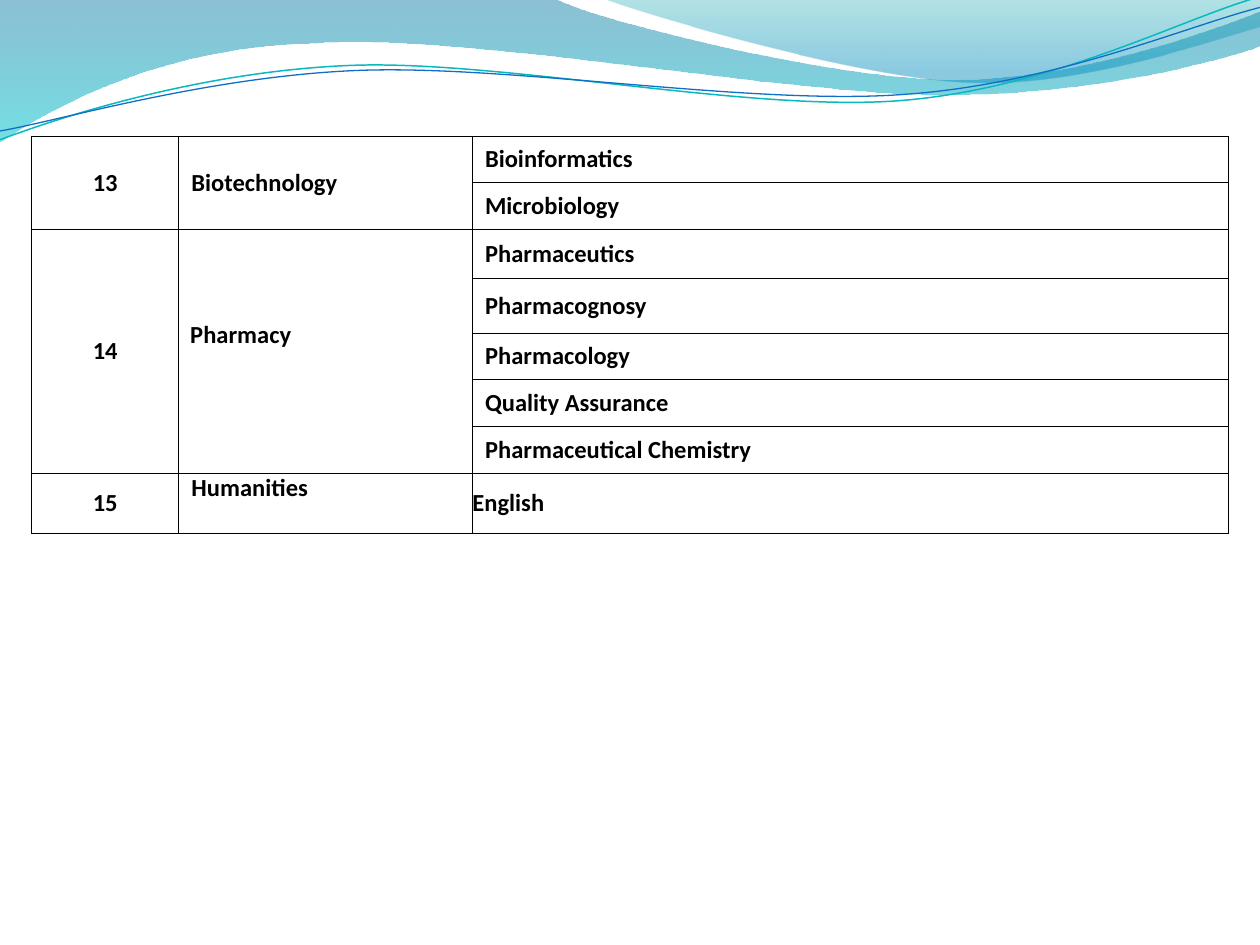
from math import cos, radians, sin

from lxml import etree
from pptx import Presentation
from pptx.dml.color import RGBColor
from pptx.enum.text import MSO_ANCHOR, PP_ALIGN
from pptx.oxml import parse_xml
from pptx.oxml.ns import nsdecls, qn
from pptx.util import Inches, Pt

# Wave outlines on a grid of ten columns across the slide: a start point,
# then points for lines (2 numbers) and Bezier curves (6 numbers).
BROAD_WAVE = [(0, 0), (4.4, -0.01), (4.76, 0.17, 6.64, 0.63, 7.58, 0.63),
              (8.53, 0.63, 9.58, 0.26, 10, 0.09), (10.01, 0.36),
              (9.83, 0.44, 8.7, 0.76, 7.46, 0.75), (6.22, 0.75, 3.82, 0.28, 2.57, 0.34),
              (1.29, 0.36, 0.46, 0.83, -0.01, 1.13), (0, 0)]
RIGHT_WAVE = [(4.79, -0.01), (5.09, 0.11, 6.82, 0.62, 7.69, 0.65),
              (8.56, 0.69, 9.61, 0.32, 10, 0.21), (10, 0), (4.79, -0.01)]
TEAL_STRAND = [(0, 1.11), (0.48, 0.93, 1.58, 0.57, 2.77, 0.52),
               (3.95, 0.47, 5.93, 0.89, 7.13, 0.8), (8.33, 0.71, 9.38, 0.15, 9.98, -0.02)]
BLUE_STRAND = [(0, 1.04), (0.47, 0.96, 1.64, 0.61, 2.83, 0.56),
               (4.03, 0.51, 5.97, 0.84, 7.17, 0.75), (8.36, 0.67, 9.41, 0.21, 10, 0.06)]
STRAND_TILT = 2.7

# Each department: number, name, indent, space below the name, subjects
DEPARTMENTS = [
    ("13", "Biotechnology", 0.1, 0, ["Bioinformatics", "Microbiology"]),
    ("14", "Pharmacy", 0.09, 0.25, ["Pharmaceutics", "Pharmacognosy", "Pharmacology",
                                    "Quality Assurance", "Pharmaceutical Chemistry"]),
    ("15", "Humanities", 0.1, 0.24, ["English"]),
]
COLUMN_WIDTHS = [1.17, 2.33, 6]
ROW_POINTS = [26.7, 26.7, 28.1, 31.2, 26.7, 26.7, 26.7, 26.7]


def color(hex_code):
    return RGBColor.from_string(hex_code)


def turn(points, degrees):
    """Turn points clockwise about the middle of their extent."""
    xs, ys = zip(*points)
    middle_x, middle_y = (min(xs) + max(xs)) / 2, (min(ys) + max(ys)) / 2
    c, s = cos(radians(degrees)), sin(radians(degrees))
    return [(middle_x + (x - middle_x) * c - (y - middle_y) * s,
             middle_y + (x - middle_x) * s + (y - middle_y) * c) for x, y in points]


def add_outline(shapes, box, outline, closed, tilt=0):
    left, top, width = box
    unit = width / 10
    points = [(left + segment[i] * unit, top + segment[i + 1] * unit)
              for segment in outline for i in range(0, len(segment), 2)]
    points = turn(points, tilt)
    builder = shapes.build_freeform(*points[0], scale=1.0)
    builder.add_line_segments(points[1:], close=closed)
    shape = builder.convert_to_shape()
    shape.rotation = -tilt % 360
    shape.shadow.inherit = False
    # Join each three points of a curve into one Bezier segment
    lines = iter(list(shape._element.iter(qn("a:lnTo"))))
    for segment in outline[1:]:
        line = next(lines)
        if len(segment) == 6:
            curve = etree.Element(qn("a:cubicBezTo"))
            line.addprevious(curve)
            for part in (line, next(lines), next(lines)):
                curve.append(part[0])
                part.getparent().remove(part)
    return shape


def add_wave(shapes, box, outline, stops):
    wave = add_outline(shapes, box, outline, closed=True)
    wave.line.fill.background()
    wave.fill.gradient()
    wave.fill.gradient_angle = 270
    for stop, (position, hex_code, _) in zip(wave.fill.gradient_stops, stops):
        stop.position = position
        stop.color.rgb = color(hex_code)
    for tint, (_, _, opacity) in zip(wave._element.spPr.iter(qn("a:srgbClr")), stops):
        etree.SubElement(tint, qn("a:alpha")).set("val", str(opacity * 1000))


def add_strand(shapes, box, outline, hex_code, weight):
    strand = add_outline(shapes, box, outline, closed=False, tilt=STRAND_TILT)
    strand.fill.background()
    strand.line.color.rgb = color(hex_code)
    strand.line.width = Pt(weight)


def add_header(slide, box):
    add_wave(slide.shapes, box, BROAD_WAVE, [(0, "0074A1", 45), (1, "00C6CF", 55)])
    add_wave(slide.shapes, box, RIGHT_WAVE, [(0, "00A1A9", 30), (0.8, "008BBF", 45)])
    strands = slide.shapes.add_group_shape().shapes
    add_strand(strands, box, TEAL_STRAND, "0AB8BF", 0.85)
    add_strand(strands, box, BLUE_STRAND, "0F6FC6", 0.75)


def style_cell(cell):
    cell.fill.background()
    cell.margin_left = cell.margin_right = cell.margin_top = cell.margin_bottom = 0
    cell.vertical_anchor = MSO_ANCHOR.MIDDLE
    # Borders come before the fill in the cell properties
    for index, side in enumerate(("lnL", "lnR", "lnT", "lnB")):
        cell._tc.tcPr.insert(index, parse_xml(
            f'<a:{side} {nsdecls("a")} w="{Pt(0.5)}"><a:solidFill>'
            f'<a:srgbClr val="000000"/></a:solidFill></a:{side}>'))


def write_cell(cell, text, indent=None):
    """Write indented text, or centred text when there is no indent."""
    cell.text_frame.text = text
    paragraph = cell.text_frame.paragraphs[0]
    if indent is None:
        paragraph.alignment = PP_ALIGN.CENTER
    else:
        paragraph.level = 1
        properties = paragraph._p.get_or_add_pPr()
        properties.set("marL", str(Inches(indent)))
        properties.set("indent", "0")
    font = paragraph.runs[0].font
    font.name, font.size, font.bold = "Calibri", Pt(14), True
    font.color.rgb = color("000000")


def add_departments(slide, box):
    width = box[2]
    table = slide.shapes.add_table(len(ROW_POINTS), len(COLUMN_WIDTHS), *box).table
    table.first_row = table.horz_banding = False
    for column, share in zip(table.columns, COLUMN_WIDTHS):
        column.width = int(width * share / sum(COLUMN_WIDTHS))
    for row, points in zip(table.rows, ROW_POINTS):
        row.height = Pt(points)
    for cell in table.iter_cells():
        style_cell(cell)

    first = 0
    for number, name, indent, space_below, subjects in DEPARTMENTS:
        last = first + len(subjects) - 1
        if last > first:
            for column in (0, 1):
                table.cell(first, column).merge(table.cell(last, column))
        write_cell(table.cell(first, 0), number)
        write_cell(table.cell(first, 1), name, indent)
        table.cell(first, 1).margin_bottom = Inches(space_below)
        for row, subject in enumerate(subjects, first):
            write_cell(table.cell(row, 2), subject, 0 if subject == "English" else 0.1)
        first = last + 1


def main():
    presentation = Presentation()
    presentation.slide_width, presentation.slide_height = Inches(10), Inches(7.5)
    slide = presentation.slides.add_slide(presentation.slide_layouts[6])
    add_header(slide, (0, 0, presentation.slide_width))
    add_departments(slide, (Inches(0.25), Inches(1.08), Inches(9.5), Inches(3.14)))
    presentation.save("out.pptx")


if __name__ == "__main__":
    main()
